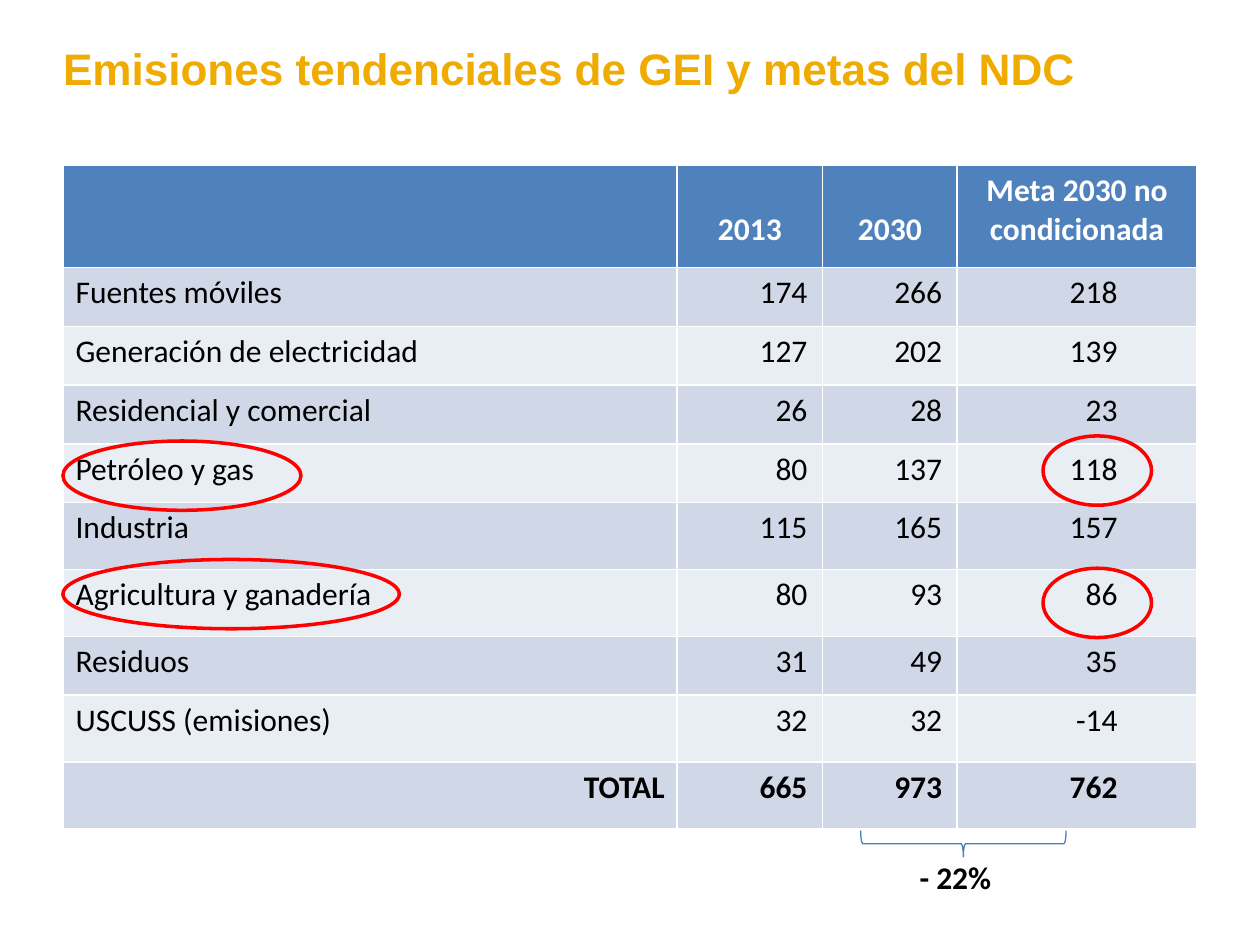
from pptx import Presentation
from pptx.dml.color import RGBColor
from pptx.enum.shapes import MSO_SHAPE as Shape
from pptx.enum.text import MSO_ANCHOR as Anchor, PP_ALIGN as Align
from pptx.util import Pt

# Content
TITLE = "Emisiones tendenciales de GEI y metas del NDC"
HEADER = ["", "2013", "2030", "Meta 2030 no condicionada"]
EMISSIONS = [
    ("Fuentes móviles", 174, 266, 218),
    ("Generación de electricidad", 127, 202, 139),
    ("Residencial y comercial", 26, 28, 23),
    ("Petróleo y gas", 80, 137, 118),
    ("Industria", 115, 165, 157),
    ("Agricultura y ganadería", 80, 93, 86),
    ("Residuos", 31, 49, 35),
    ("USCUSS (emisiones)", 32, 32, -14),
    ("TOTAL", 665, 973, 762),
]
REDUCTION = "- 22%"

# Layout in points
LEFT, WIDTH = 36, 648
TABLE_TOP = 94.5
COLUMN_WIDTHS = [351, 83, 77, 137]
LOW, HIGH = 33.6, 38.2
ROW_HEIGHTS = [58.3, LOW, LOW, LOW, LOW, HIGH, HIGH, LOW, HIGH, HIGH]
RIGHT_MARGINS = [7.2, 8.6, 8.6, 45.4]
HIGHLIGHT_HEIGHT = 39.6
HIGHLIGHTS = [  # left, top, width
    (LEFT, 252, 136),
    (LEFT, 319.7, 192.2),
    (596, 249.1, 62),
    (596, 324.7, 62),
]

GOLD, BLUE, BRACE_BLUE, RED = "F0AB00", "4F81BD", "4B7EBC", "FF0000"
BLACK, WHITE = "000000", "FFFFFF"
BANDS = ["E9EDF4", "D0D8E8"]


def paint(color_format, hex_color):
    color_format.rgb = RGBColor.from_string(hex_color)


def style(paragraph, size, color, bold=False, font="Calibri", align=Align.LEFT):
    paragraph.alignment = align
    paragraph.font.name = font
    paragraph.font.size = Pt(size)
    paragraph.font.bold = bold
    paint(paragraph.font.color, color)


def add_outline(slide, preset, box, color, weight):
    outline = slide.shapes.add_shape(preset, *map(Pt, box))
    outline.shadow.inherit = False
    outline.fill.background()
    paint(outline.line.color, color)
    outline.line.width = Pt(weight)
    return outline


def fill_cell(cell, text, fill, color, bold, align):
    cell.fill.solid()
    paint(cell.fill.fore_color, fill)
    cell.text = str(text)
    style(cell.text_frame.paragraphs[0], 18, color, bold, align=align)


def add_emissions_table(slide):
    rows = [HEADER, *EMISSIONS]
    table = slide.shapes.add_table(
        len(rows), len(HEADER), Pt(LEFT), Pt(TABLE_TOP),
        Pt(WIDTH), Pt(sum(ROW_HEIGHTS))).table
    for column, width in zip(table.columns, COLUMN_WIDTHS):
        column.width = Pt(width)
    for row, height in zip(table.rows, ROW_HEIGHTS):
        row.height = Pt(height)
    for r, values in enumerate(rows):
        is_total = values[0] == "TOTAL"
        for c, value in enumerate(values):
            cell = table.cell(r, c)
            if r == 0:
                fill_cell(cell, value, BLUE, WHITE, True, Align.CENTER)
                cell.vertical_anchor = Anchor.BOTTOM
                cell.margin_bottom = Pt(10.8)
            else:
                align = Align.RIGHT if c or is_total else Align.LEFT
                fill_cell(cell, value, BANDS[r % 2], BLACK, is_total, align)
                cell.margin_right = Pt(RIGHT_MARGINS[c])


def main():
    prs = Presentation()
    prs.slide_width, prs.slide_height = Pt(720), Pt(540)
    slide = prs.slides.add_slide(prs.slide_layouts[5])

    # Title
    title = slide.shapes.title
    title.left, title.top, title.width, title.height = map(
        Pt, (LEFT, 19.4, WIDTH, 38.2))
    title_frame = title.text_frame
    title_frame.text = TITLE
    title_frame.margin_left = title_frame.margin_right = 0
    title_frame.vertical_anchor = Anchor.BOTTOM
    style(title_frame.paragraphs[0], 25.2, GOLD, True, "Arial")

    add_emissions_table(slide)

    # Highlighted sectors and their targets
    for left, top, width in HIGHLIGHTS:
        add_outline(slide, Shape.OVAL, (left, top, width, HIGHLIGHT_HEIGHT), RED, 2)

    # Brace and reduction from 2030 to the target
    brace = add_outline(slide, Shape.LEFT_BRACE, (543, 423.4, 15, 117.4), BRACE_BLUE, 0.75)
    brace.rotation = 270
    reduction = slide.shapes.add_textbox(Pt(518.4), Pt(486.7), Pt(60.5), Pt(29))
    reduction.text_frame.word_wrap = True
    reduction.text_frame.text = REDUCTION
    style(reduction.text_frame.paragraphs[0], 18, BLACK, True)

    prs.save("out.pptx")


if __name__ == "__main__":
    main()
